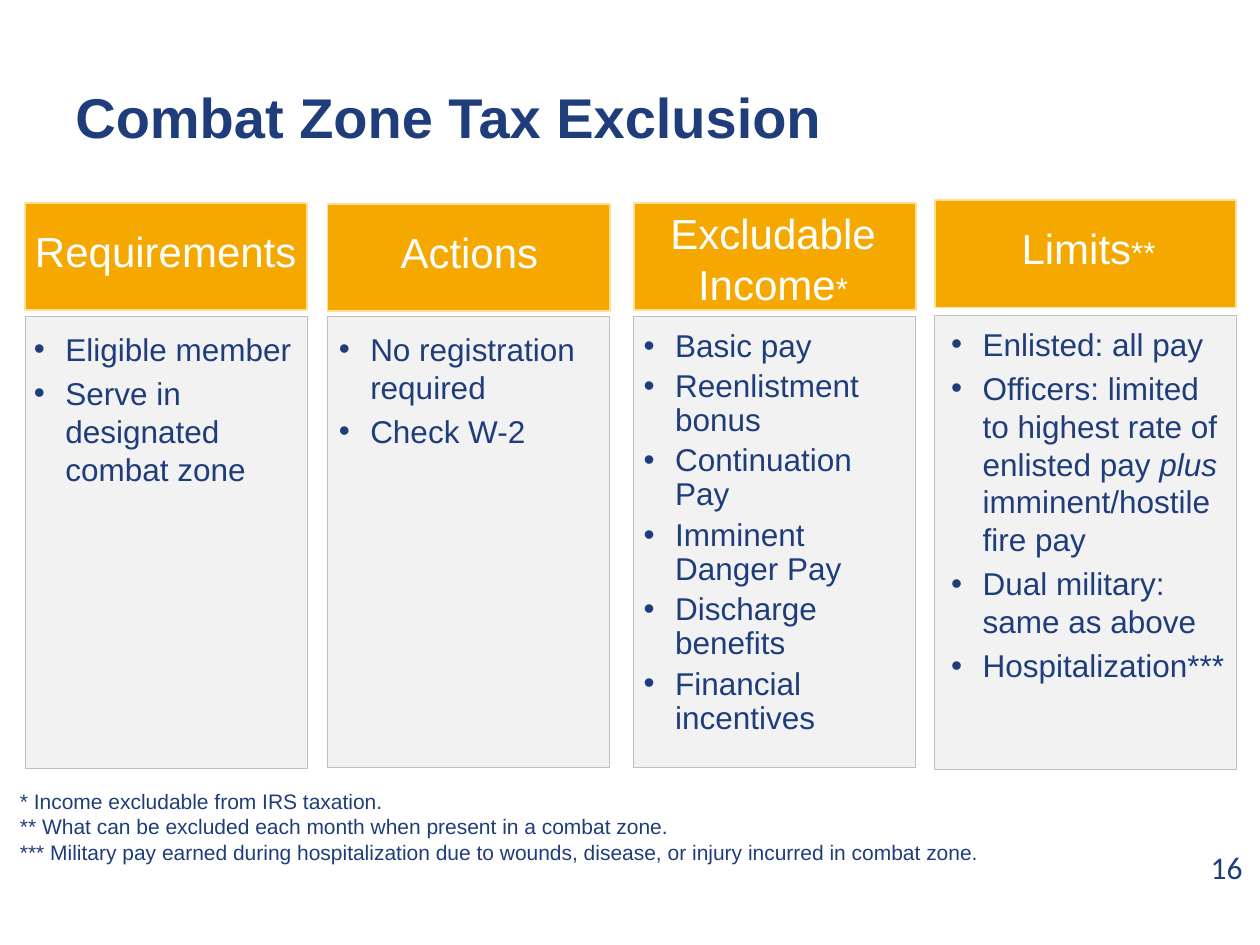
from dataclasses import dataclass

from lxml import etree
from pptx import Presentation
from pptx.dml.color import RGBColor
from pptx.enum.shapes import MSO_SHAPE
from pptx.enum.text import MSO_ANCHOR, PP_ALIGN
from pptx.oxml.ns import qn
from pptx.util import Emu, Pt

PX = 9144
NAVY = RGBColor(0x1F, 0x3D, 0x7B)
WHITE = RGBColor(0xFF, 0xFF, 0xFF)
ORANGE = RGBColor(0xF5, 0xA8, 0x00)
CREAM = RGBColor(0xFF, 0xDE, 0x95)
PALE_GRAY = RGBColor(0xF2, 0xF2, 0xF2)
MID_GRAY = RGBColor(0xBF, 0xBF, 0xBF)
LEFT, CENTER, RIGHT = PP_ALIGN.LEFT, PP_ALIGN.CENTER, PP_ALIGN.RIGHT
TOP, MIDDLE = MSO_ANCHOR.TOP, MSO_ANCHOR.MIDDLE
RECTANGLE = MSO_SHAPE.RECTANGLE
HEADER_HEIGHT = 85
INDENT = 25


@dataclass(frozen=True)
class Area:
    left: int
    top: int
    width: int
    height: int

    def emu(self) -> list[Emu]:
        return [Emu(n * PX) for n in (self.left, self.top, self.width, self.height)]


@dataclass(frozen=True)
class Span:
    text: str
    size: int | None = None
    italic: bool | None = None


@dataclass(frozen=True)
class Style:
    size: int
    color: RGBColor = NAVY
    align: PP_ALIGN = LEFT
    anchor: MSO_ANCHOR = TOP
    name: str = "Arial"
    bold: bool = False
    bullet: bool = False
    line_spacing: float | None = None
    space_before: float = 0
    right_inset: int = 10


@dataclass(frozen=True)
class Column:
    heading: tuple[Span, ...]
    header_top: int
    label: Area
    panel: Area
    body: Area
    items: tuple[tuple[Span, ...], ...]
    line_spacing: float | None = None
    right_inset: int = 10


def plain(*texts: str) -> tuple[tuple[Span, ...], ...]:
    return tuple((Span(text),) for text in texts)


COLUMNS = (
    Column(
        (Span("Requirements"),), 161, Area(12, 174, 239, 50),
        Area(20, 251, 224, 359), Area(17, 257, 241, 171),
        plain("Eligible member", "Serve in designated combat zone"),
    ),
    Column(
        (Span("Actions"),), 162, Area(263, 175, 219, 50),
        Area(260, 251, 224, 358), Area(259, 257, 241, 136),
        plain("No registration required", "Check W-2"),
    ),
    Column(
        (Span("Excludable Income"), Span("*", 18)), 161, Area(504, 160, 219, 91),
        Area(503, 251, 224, 358), Area(501, 257, 241, 352),
        plain("Basic pay", "Reenlistment bonus", "Continuation Pay",
              "Imminent Danger Pay", "Discharge benefits", "Financial incentives"),
        line_spacing=0.9, right_inset=30,
    ),
    Column(
        (Span("Limits"), Span("**", 18)), 159, Area(747, 172, 234, 50),
        Area(742, 250, 239, 361), Area(745, 253, 241, 358),
        (
            (Span("Enlisted: all pay"),),
            (Span("Officers: limited to highest rate of enlisted pay "),
             Span("plus", italic=True), Span(" imminent/hostile fire pay")),
            *plain("Dual military: same as above", "Hospitalization***"),
        ),
    ),
)

TITLE = plain("Combat Zone Tax Exclusion")
FOOTNOTES = plain(
    "* Income excludable from IRS taxation.",
    "** What can be excluded each month when present in a combat zone.",
    "*** Military pay earned during hospitalization due to wounds, disease, "
    "or injury incurred in combat zone.",
)


def add_bullet(para) -> None:
    properties = para._p.get_or_add_pPr()
    properties.set("marL", str(INDENT * PX))
    properties.set("indent", str(-INDENT * PX))
    etree.SubElement(properties, qn("a:buFont")).set("typeface", "Arial")
    etree.SubElement(properties, qn("a:buChar")).set("char", "•")


def add_text(page, area: Area, lines: tuple[tuple[Span, ...], ...], style: Style) -> None:
    frame = page.shapes.add_textbox(*area.emu()).text_frame
    frame.word_wrap = True
    frame.vertical_anchor = style.anchor
    frame.margin_right = Emu(style.right_inset * PX)
    for index, spans in enumerate(lines):
        para = frame.add_paragraph() if index else frame.paragraphs[0]
        if style.bullet:
            add_bullet(para)
        para.alignment = style.align
        if style.line_spacing:
            para.line_spacing = style.line_spacing
        if index and style.space_before:
            para.space_before = Pt(style.space_before)
        para.font.name = style.name
        para.font.size = Pt(style.size)
        para.font.bold = style.bold
        para.font.color.rgb = style.color
        for span in spans:
            run = para.add_run()
            run.text = span.text
            if span.size:
                run.font.size = Pt(span.size)
            if span.italic:
                run.font.italic = True


def add_rectangle(page, area: Area, fill: RGBColor, line: RGBColor, weight: float) -> None:
    shape = page.shapes.add_shape(RECTANGLE, *area.emu())
    shape.shadow.inherit = False
    shape.fill.solid()
    shape.fill.fore_color.rgb = fill
    shape.line.color.rgb = line
    shape.line.width = Pt(weight)


def add_column(page, column: Column) -> None:
    panel = column.panel
    header = Area(panel.left, column.header_top, panel.width, HEADER_HEIGHT)
    add_rectangle(page, panel, PALE_GRAY, MID_GRAY, 0.5)
    add_rectangle(page, header, ORANGE, CREAM, 1)
    add_text(page, column.label, (column.heading,), Style(24, WHITE, CENTER))
    body_style = Style(18, bullet=True, line_spacing=column.line_spacing,
                       space_before=3.6, right_inset=column.right_inset)
    add_text(page, column.body, column.items, body_style)


def main() -> None:
    deck = Presentation()
    deck.slide_width, deck.slide_height = Emu(1000 * PX), Emu(750 * PX)
    page = deck.slides.add_slide(deck.slide_layouts[6])
    add_text(page, Area(50, 30, 900, 125), TITLE, Style(32, anchor=MIDDLE, bold=True))
    for column in COLUMNS:
        add_column(page, column)
    add_text(page, Area(6, 621, 805, 71), FOOTNOTES, Style(12))
    add_text(page, Area(763, 668, 233, 40), plain("16"),
             Style(18, align=RIGHT, name="Calibri"))
    deck.save("out.pptx")


if __name__ == "__main__":
    main()
